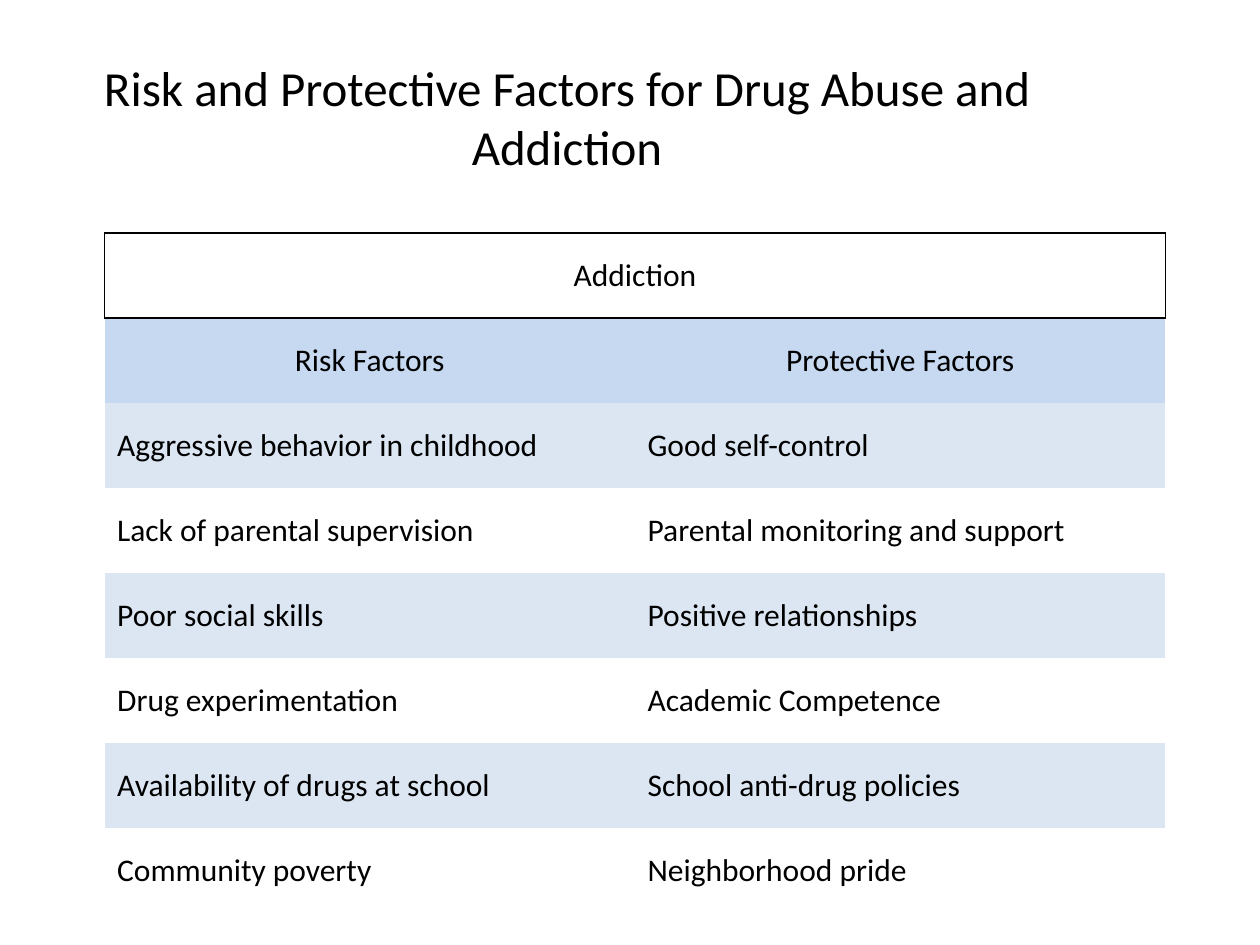
from lxml.etree import SubElement
from pptx import Presentation
from pptx.dml.color import RGBColor
from pptx.enum.text import MSO_ANCHOR as Anchor, PP_ALIGN as Align
from pptx.oxml.ns import qn
from pptx.util import Inches, Pt

NO_STYLE = "{2D5ABB26-0587-4C30-8999-92F81FD0307C}"
HEADINGS = ("Risk Factors", "Protective Factors")
FACTORS = [
    ("Aggressive behavior in childhood", "Good self-control"),
    ("Lack of parental supervision", "Parental monitoring and support"),
    ("Poor social skills", "Positive relationships"),
    ("Drug experimentation", "Academic Competence"),
    ("Availability of drugs at school", "School anti-drug policies"),
    ("Community poverty", "Neighborhood pride"),
]


def color(hex_code):
    return RGBColor.from_string(hex_code)


class FactorSlide:
    font = "Calibri"
    ink = "000000"
    heading_fill = "C6D9F1"
    band_fill = "DCE6F2"

    def __init__(self, deck):
        self.slide = deck.slides.add_slide(deck.slide_layouts[5])

    def add_text(self, frame, text, size, align):
        paragraph = frame.paragraphs[0]
        paragraph.alignment = align
        run = paragraph.add_run()
        run.text = text
        run.font.name = self.font
        run.font.size = Pt(size)
        run.font.color.rgb = color(self.ink)

    def title(self, text, left, top, width, height):
        title = self.slide.shapes.title
        title.left, title.top = Inches(left), Inches(top)
        title.width, title.height = Inches(width), Inches(height)
        title.text_frame.vertical_anchor = Anchor.MIDDLE
        self.add_text(title.text_frame, text, 28, Align.CENTER)

    def table(self, rows, columns, left, top, width, height):
        frame = self.slide.shapes.add_table(
            rows, columns, Inches(left), Inches(top), Inches(width), Inches(height))
        table = frame.table
        table._tbl.tblPr.find(qn("a:tableStyleId")).text = NO_STYLE
        return table

    def cell(self, cell, text, align=Align.LEFT, fill=None):
        cell.vertical_anchor = Anchor.MIDDLE
        self.add_text(cell.text_frame, text, 18, align)
        if fill:
            cell.fill.solid()
            cell.fill.fore_color.rgb = color(fill)
        else:
            cell.fill.background()

    def border(self, cell, sides):
        properties = cell._tc.get_or_add_tcPr()
        for side in sides:
            line = SubElement(properties, qn(f"a:ln{side}"), w=str(Pt(1)))
            fill = SubElement(line, qn("a:solidFill"))
            SubElement(fill, qn("a:srgbClr"), val=self.ink)


def main():
    deck = Presentation()
    deck.slide_width, deck.slide_height = Inches(10), Inches(7.5)
    page = FactorSlide(deck)
    page.title("Risk and Protective Factors for Drug Abuse and Addiction", 0, 0.3, 9, 1.25)

    # Outlined heading across both columns
    table = page.table(len(FACTORS) + 2, 2, 0.83, 1.85, 8.42, 5.4)
    topic, topic_end = table.cell(0, 0), table.cell(0, 1)
    topic.merge(topic_end)
    page.border(topic, "LRTB")
    page.border(topic_end, "RT")
    page.cell(topic, "Addiction", Align.CENTER)

    # Column headings
    for column, heading in enumerate(HEADINGS):
        page.cell(table.cell(1, column), heading, Align.CENTER, page.heading_fill)

    # Factor pairs, every other row shaded
    for index, pair in enumerate(FACTORS):
        band = page.band_fill if index % 2 == 0 else None
        for column, factor in enumerate(pair):
            page.cell(table.cell(index + 2, column), factor, fill=band)

    deck.save("out.pptx")


if __name__ == "__main__":
    main()
